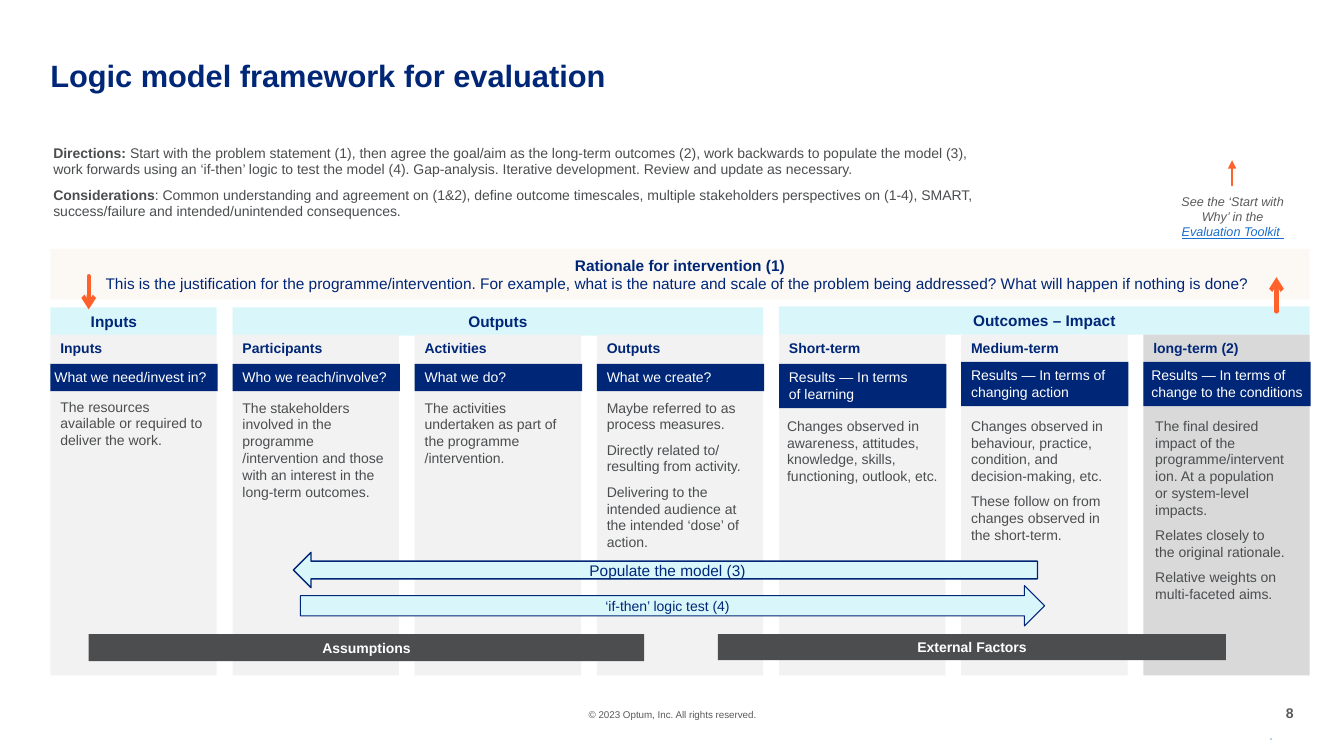
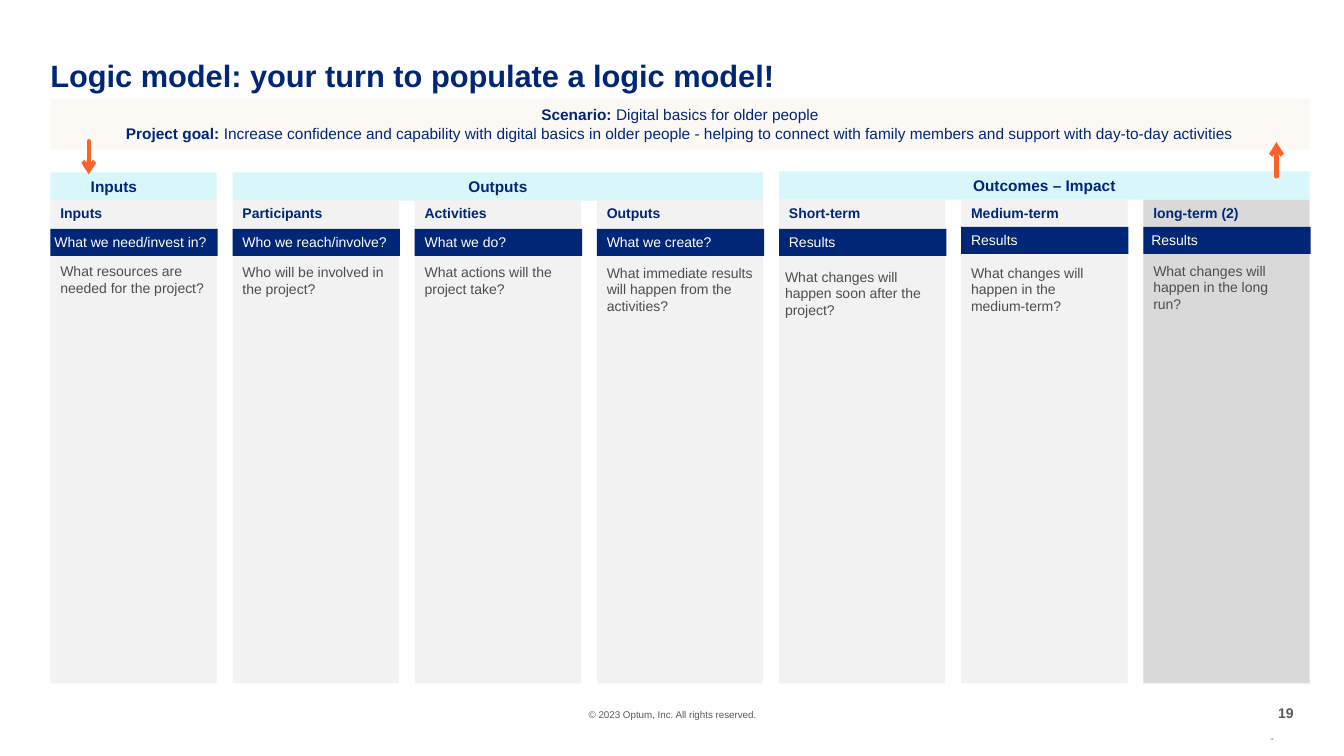
from lxml import etree
from pptx import Presentation
from pptx import util as u
from pptx.dml.color import RGBColor
from pptx.enum import shapes, text
from pptx.oxml.ns import qn

Inches = u.Inches

# Colours and shared format
NAVY = RGBColor(0x00, 0x26, 0x77)
BLUE = RGBColor(0x00, 0x5E, 0xB8)
LINK = RGBColor(0x19, 0x6E, 0xCF)
ORANGE = RGBColor(0xFF, 0x61, 0x2B)
CREAM = RGBColor(0xFC, 0xF9, 0xF4)
AQUA = RGBColor(0xD9, 0xF6, 0xFA)
PALE = RGBColor(0xF2, 0xF2, 0xF2)
SILVER = RGBColor(0xD9, 0xD9, 0xD9)
CHARCOAL = RGBColor(0x4B, 0x4D, 0x4F)
GREY = RGBColor(0x5A, 0x5A, 0x5A)
WHITE = RGBColor(0xFF, 0xFF, 0xFF)
FONT = "Arial"
BOLD = {"bold": True}
LEFT_ALIGN, CENTER, RIGHT = text.PP_ALIGN.LEFT, text.PP_ALIGN.CENTER, text.PP_ALIGN.RIGHT
MIDDLE = text.MSO_ANCHOR.MIDDLE
RECTANGLE = shapes.MSO_SHAPE.RECTANGLE
NO_INSETS = (0, 0, 0, 0)

# Column grid
LEFT, TOTAL_WIDTH, COLUMN_WIDTH, STRIP_WIDTH = 0.5, 12.49, 1.65, 1.66
COPYRIGHT = "© 2023 Optum, Inc. All rights reserved."

# Bands: label, first column, columns spanned, rise, alignment, left inset
BANDS = [("Inputs", 0, 1, 0, LEFT_ALIGN, 0.4),
         ("Outputs", 1, 3, 0, CENTER, 0.1),
         ("Outcomes – Impact", 4, 3, 0.01, CENTER, 0.1)]

# Columns: heading, fill, question inset, question shift, body width, body inset
COLUMNS = [
    ("Inputs", PALE, 0.04, 0, 1.65, 0.1),
    ("Participants", PALE, 0.1, 0, 1.66, 0.1),
    ("Activities", PALE, 0.1, 0, 1.65, 0.1),
    ("Outputs", PALE, 0.1, 0, 1.65, 0.1),
    ("Short-term", PALE, 0.1, 0, 1.68, 0.08),
    ("Medium-term", PALE, 0.1, -0.02, 1.54, 0.1),
    ("long-term (2)", SILVER, 0.08, -0.02, 1.5, 0.1),
]
QUESTIONS = ["What we need/invest in?", "Who we reach/involve?", "What we do?",
             "What we create?"]

# Slide content; bodies: shift right, distance below band top, height, paragraphs
FRAMEWORK = {
    "title": "Logic model framework for evaluation",
    "number": "8",
    "banner_top": 2.47,
    "banner": [
        [("Rationale for intervention (1)", BOLD)],
        "This is the justification for the programme/intervention. For example, what is "
        "the nature and scale of the problem being addressed? What will happen if "
        "nothing is done? ",
    ],
    "band_top": 3.05,
    "bottom": 6.7,
    "questions": QUESTIONS + [
        "Results — In terms\vof learning",
        "Results — In terms of changing action",
        "Results — In terms of change to the conditions",
    ],
    "question_height": [0.27] * 4 + [0.44] * 3,
    "bodies": [
        (0, 0.85, 0.61, ["The resources available or required to deliver the work."]),
        (0, 0.86, 1.11, ["The stakeholders involved in the programme /intervention and "
                         "those with an interest in the long-term outcomes."]),
        (0, 0.86, 0.77, ["The activities undertaken as part of the programme "
                         "/intervention."]),
        (0, 0.86, 1.62, ["Maybe referred to as process measures.",
                         "Directly related to/ resulting from activity.",
                         "Delivering to the intended audience at the intended ‘dose’ "
                         "of action."]),
        (0, 1.04, 0.77, ["Changes observed in awareness, attitudes, knowledge, skills, "
                         "functioning, outlook, etc."]),
        (0, 1.04, 1.36, ["Changes observed in behaviour, practice, condition, and "
                         "decision-making, etc.",
                         "These follow on from changes observed in the short-term."]),
        (0.02, 1.04, 1.95, ["The final desired impact of the programme/intervention. At "
                            "a population or system-level impacts.",
                            "Relates closely to the original rationale.",
                            "Relative weights on multi-faceted aims."]),
    ],
}
EXERCISE = {
    "title": "Logic model: your turn to populate a logic model!",
    "number": "19",
    "banner_top": 0.98,
    "banner": [
        [("Scenario: ", BOLD), ("Digital basics for older people", {})],
        [("Project goal: ", BOLD),
         ("Increase confidence and capability with digital basics in older people - "
          "helping to connect with family members and support with day-to-day "
          "activities", {})],
    ],
    "band_top": 1.71,
    "bottom": 6.78,
    "questions": QUESTIONS + ["Results"] * 3,
    "question_height": [0.27] * 7,
    "bodies": [
        (0, 0.85, 0.44, ["What resources are needed for the project?"]),
        (0, 0.86, 0.44, ["Who will be involved in the project?"]),
        (0, 0.86, 0.44, ["What actions will the project take?"]),
        (0, 0.86, 0.61, ["What immediate results will happen from the activities?"]),
        (-0.02, 0.9, 0.61, ["What changes will happen soon after the project?"]),
        (0, 0.86, 0.61, ["What changes will happen in the medium-term?"]),
        (0, 0.84, 0.61, ["What changes will happen in the long run?"]),
    ],
}
GUIDANCE = [
    [("Directions: ", BOLD),
     ("Start with the problem statement (1), then agree the goal/aim as the long-term "
      "outcomes (2), work backwards to populate the model (3), work forwards using an "
      "‘if-then’ logic to test the model (4). Gap-analysis. Iterative development. "
      "Review and update as necessary.", {})],
    [("Considerations", BOLD),
     (": Common understanding and agreement on (1&2), define outcome timescales, "
      "multiple stakeholders perspectives on (1-4), SMART, success/failure and "
      "intended/unintended consequences.", {})],
]
TOOLKIT_NOTE = [[("See the ‘Start with Why’ in the ", {}),
                 ("Evaluation Toolkit ", {"underline": True, "color": LINK})]]
# Block arrows: label, shape, box, line width, text size
BLOCK_ARROWS = [
    ("‘if-then’ logic test (4)", shapes.MSO_SHAPE.RIGHT_ARROW,
     (2.98, 5.81, 7.38, 0.4), 0.75, 10),
    ("Populate the model (3) ", shapes.MSO_SHAPE.LEFT_ARROW,
     (2.91, 5.48, 7.38, 0.35), 1, 11),
]
BARS = [("Assumptions", (0.88, 6.29, 5.51, 0.27)),
        ("External Factors", (7.12, 6.29, 5.04, 0.26))]


def write(shape, paragraphs, size, color, insets=(0.1, 0.05, 0.1, 0.05), anchor=None,
          align=LEFT_ALIGN, after=0, spacing=1.0, **formats):
    """Fill a shape with paragraphs, each a string or a list of (text, formats)."""
    frame = shape.text_frame
    margins = zip(("left", "top", "right", "bottom"), insets)
    settings = {f"margin_{side}": Inches(inset) for side, inset in margins}
    settings |= {"word_wrap": True, "vertical_anchor": anchor or text.MSO_ANCHOR.TOP}
    for name, value in settings.items():
        setattr(frame, name, value)
    for index, runs in enumerate(paragraphs):
        paragraph = frame.add_paragraph() if index else frame.paragraphs[0]
        layout = {"alignment": align, "space_after": u.Pt(after), "line_spacing": spacing}
        for name, value in layout.items():
            setattr(paragraph, name, value)
        for content, run_formats in [(runs, {})] if isinstance(runs, str) else runs:
            for position, piece in enumerate(content.split("\v")):
                if position:
                    paragraph.add_line_break()
                run = paragraph.add_run()
                run.text = piece
                values = {"name": FONT, "size": u.Pt(size), **formats, **run_formats}
                run.font.color.rgb = values.pop("color", color)
                for name, value in values.items():
                    setattr(run.font, name, value)


def add_text(slide, box, paragraphs, size, color, **options):
    write(slide.shapes.add_textbox(*map(Inches, box)), paragraphs, size, color, **options)


def add_block(slide, box, fill, paragraphs, size, color, kind=RECTANGLE, line=0, **options):
    shape = slide.shapes.add_shape(kind, *map(Inches, box))
    shape.shadow.inherit = False
    shape.fill.solid()
    shape.fill.fore_color.rgb = fill
    if line:
        shape.line.color.rgb = NAVY
        shape.line.width = u.Pt(line)
    else:
        shape.line.fill.background()
    write(shape, paragraphs, size, color, **options)


def add_arrow(slide, x, start, end, width, head):
    """Draw a vertical orange arrow from start to end."""
    connector = slide.shapes.add_connector(
        shapes.MSO_CONNECTOR.STRAIGHT, *map(Inches, (x, start, x, end)))
    connector.line.color.rgb = ORANGE
    connector.line.width = u.Pt(width)
    properties = connector._element.spPr
    line = properties.find(qn("a:ln"))
    line.set("cap", "rnd")
    etree.SubElement(line, qn("a:tailEnd"), type=head)
    etree.SubElement(properties, qn("a:effectLst"))


def add_frame(slide, title, number):
    """Title, copyright line and page number."""
    bare = {"insets": NO_INSETS}
    add_text(slide, (5.14, 7.03, 3.06, 0.12), [COPYRIGHT], 7, GREY, align=CENTER, **bare)
    add_text(slide, (12.33, 6.99, 0.5, 0.17), [number], 10, GREY, align=RIGHT, bold=True,
             **bare)
    add_text(slide, (12.6, 7.24, 0.67, 0.2), [number], 2, BLUE, anchor=MIDDLE, **bare)
    add_text(slide, (LEFT, 0.6, 12.53, 0.35), [title], 22, NAVY, spacing=0.9, bold=True,
             **bare)


def add_logic_model(slide, content):
    """Banner, bands and the seven columns."""
    pitch = (TOTAL_WIDTH - COLUMN_WIDTH) / (len(COLUMNS) - 1)
    band_top = content["band_top"]
    add_block(slide, (LEFT, content["banner_top"], TOTAL_WIDTH, 0.5), CREAM,
              content["banner"], 11, NAVY, anchor=MIDDLE, align=CENTER)

    for label, first, span, rise, align, inset in BANDS:
        add_block(slide, (LEFT + first * pitch, band_top - rise,
                          (span - 1) * pitch + COLUMN_WIDTH, 0.28),
                  AQUA, [label], 11, NAVY, anchor=MIDDLE, bold=True, align=align,
                  insets=(inset, 0.05, 0.1, 0.05))

    add_arrow(slide, 0.88, band_top - 0.31, band_top + 0.02, 3, "arrow")
    add_arrow(slide, 12.66, band_top + 0.04, band_top - 0.3, 3, "arrow")

    column_top = band_top + 0.27
    rows = zip(COLUMNS, content["questions"], content["question_height"], content["bodies"])
    for index, (column, question, question_height, body) in enumerate(rows):
        heading, fill, inset, rise, body_width, body_inset = column
        shift, offset, body_height, paragraphs = body
        left = LEFT + index * pitch
        add_block(slide, (left, column_top, COLUMN_WIDTH, content["bottom"] - column_top),
                  fill, [heading], 10, NAVY, bold=True)
        add_block(slide, (left, band_top + 0.56 + rise, STRIP_WIDTH, question_height),
                  NAVY, [question], 10, WHITE, insets=(inset, 0.05, inset, 0.05))
        add_text(slide, (left + shift, band_top + offset, body_width, body_height),
                 paragraphs, 10, CHARCOAL, after=6,
                 insets=(body_inset, 0.05, body_inset, 0.05))


def add_framework_notes(slide):
    """Guidance, process arrows, bars and toolkit note."""
    add_text(slide, (0.43, 1.38, 9.31, 0.86), GUIDANCE, 10, CHARCOAL, after=6)
    for label, kind, box, line, size in BLOCK_ARROWS:
        add_block(slide, box, AQUA, [label], size, NAVY, kind=kind, line=line,
                  anchor=MIDDLE, align=CENTER, insets=NO_INSETS)
    for label, box in BARS:
        add_block(slide, box, CHARCOAL, [label], 10, WHITE, anchor=MIDDLE, align=CENTER,
                  bold=True)
    add_text(slide, (11.62, 1.92, 1.21, 0.45), TOOLKIT_NOTE, 9, GREY, align=CENTER,
             insets=NO_INSETS, italic=True)
    add_arrow(slide, 12.22, 1.84, 1.59, 1.5, "triangle")


def main():
    presentation = Presentation()
    presentation.slide_width, presentation.slide_height = Inches(13.33), Inches(7.5)
    for content in (FRAMEWORK, EXERCISE):
        slide = presentation.slides.add_slide(presentation.slide_layouts[6])
        add_frame(slide, content["title"], content["number"])
        add_logic_model(slide, content)
        if content is FRAMEWORK:
            add_framework_notes(slide)
    presentation.save("out.pptx")


if __name__ == "__main__":
    main()
